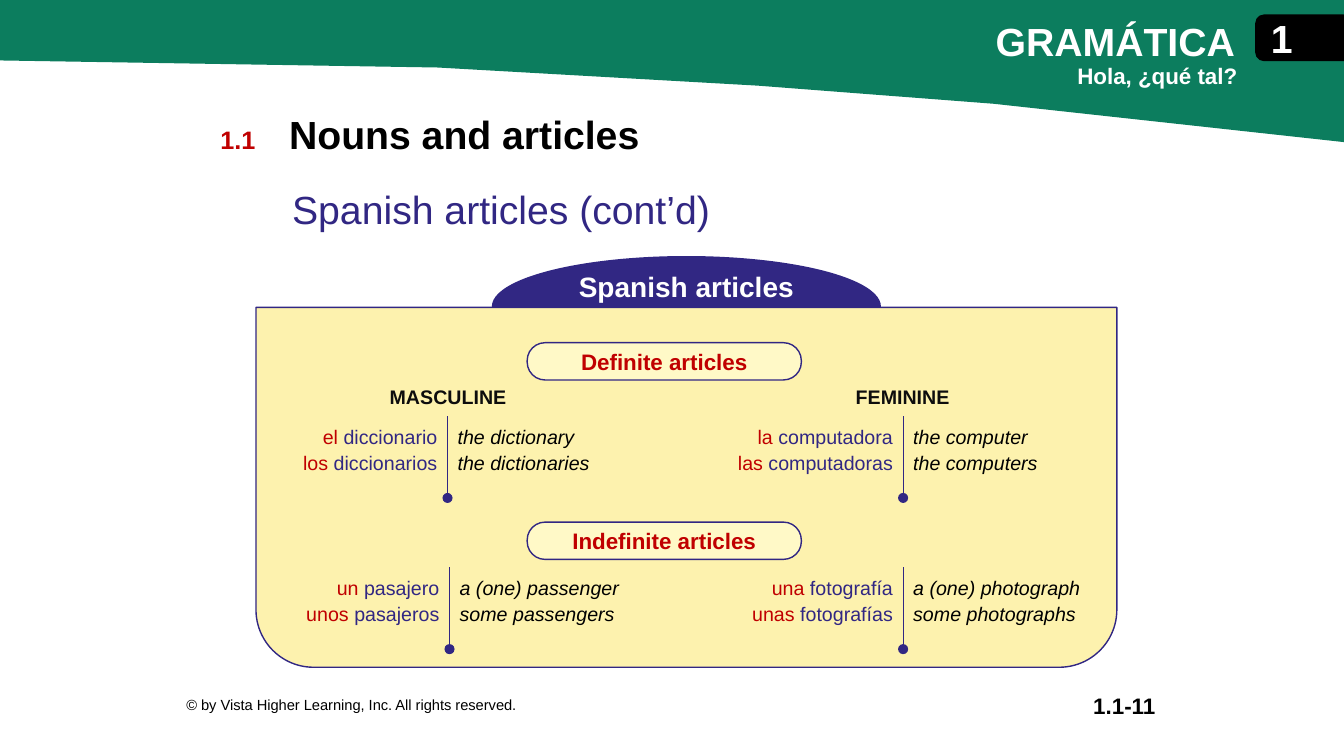
from itertools import accumulate
from lxml.etree import SubElement
from pptx import Presentation
from pptx.dml.color import RGBColor as RGB
from pptx.enum.shapes import MSO_SHAPE as Form
from pptx.enum.text import MSO_ANCHOR as Anchor, PP_ALIGN as Align
from pptx.oxml.ns import qn
from pptx.util import Emu, Inches, Pt

GREEN = RGB(0x0C, 0x7D, 0x5E)
RED = RGB(0xC0, 0x00, 0x00)
BLUE = RGB(0x31, 0x27, 0x83)
CREAM = RGB(0xFD, 0xF2, 0xAE)
PALE = RGB(0xFF, 0xF9, 0xC7)
INK = RGB(0x0D, 0x0D, 0x0D)
BLACK = RGB(0, 0, 0)
WHITE = RGB(0xFF, 0xFF, 0xFF)

COLS, ROWS = 160, 90
CELL = Inches(7.5) / ROWS


def cells(*units):
    return [Emu(round(unit * CELL)) for unit in units]


def write(frame, lines, size=14, color=BLACK, bold=False, italic=False,
          align=Align.LEFT, after=0):
    for num, line in enumerate(lines):
        para = frame.add_paragraph() if num else frame.paragraphs[0]
        para.alignment = align
        para.space_after = Pt(after)
        for part in [(line, color)] if isinstance(line, str) else line:
            run = para.add_run()
            run.text, tint = part
            font = run.font
            font.name, font.size = "Arial", Pt(size)
            font.bold, font.italic = bold, italic
            font.color.rgb = tint


class Board:
    """Holds the current slide and draws styled elements on its grid."""

    def __init__(self, deck):
        self.slide = deck.slides.add_slide(deck.slide_layouts[6])
        self.shapes = self.slide.shapes

    def paint(self, shape, fill, line=None):
        shape.shadow.inherit = False
        shape.fill.solid()
        shape.fill.fore_color.rgb = fill
        if line is None:
            shape.line.fill.background()
        else:
            shape.line.color.rgb = line
            shape.line.width = Pt(1)
        return shape

    def wave(self, points, fill):
        spots = [cells(*point) for point in points]
        pen = self.shapes.build_freeform(*spots[0])
        pen.add_line_segments(spots[1:], close=True)
        self.paint(pen.convert_to_shape(), fill)

    def form(self, kind, box, fill, line=None, bends=(), turn=0):
        shape = self.paint(self.shapes.add_shape(kind, *cells(*box)), fill, line)
        for num, bend in enumerate(bends):
            shape.adjustments[num] = bend
        shape.rotation = turn
        return shape

    def label(self, box, text, anchor=Anchor.MIDDLE, **style):
        frame = self.shapes.add_textbox(*cells(*box)).text_frame
        frame.word_wrap = True
        frame.vertical_anchor = anchor
        write(frame, [text], **style)
        return frame

    def badge(self, kind, box, text, fill, line=None, bends=(), **style):
        frame = self.form(kind, box, fill, line, bends).text_frame
        frame.vertical_anchor = Anchor.MIDDLE
        write(frame, [text], bold=True, align=Align.CENTER, **style)
        return frame

    def edge(self, cell, side):
        props = cell._tc.get_or_add_tcPr()
        for num, name in enumerate(("lnL", "lnR", "lnT", "lnB")):
            line = SubElement(props, qn(f"a:{name}"), w=str(Pt(1)))
            props.insert(num, line)
            if name == side:
                fill = SubElement(line, qn("a:solidFill"))
                SubElement(fill, qn("a:srgbClr"), val=str(BLUE))
            else:
                SubElement(line, qn("a:noFill"))

    def pairs(self, left, top, widths, texts):
        high = 9.48
        grid = self.shapes.add_table(
            1, len(widths), *cells(left, top, sum(widths), high)).table
        grid.first_row = grid.horz_banding = False
        for num, (wide, lines) in enumerate(zip(widths, texts)):
            grid.columns[num].width = cells(wide)[0]
            cell = grid.cell(0, num)
            cell.fill.background()
            cell.margin_top = Inches(0.1)
            cell.margin_bottom = 0
            noun = num % 2 == 0
            self.edge(cell, "lnR" if noun else "lnL")
            if noun:
                lines = [[(word, RED), (f" {rest}", BLUE)]
                         for word, rest in map(str.split, lines)]
            write(cell.text_frame, lines, italic=not noun, after=3,
                  align=Align.RIGHT if noun else Align.LEFT)
        dot = 1.2
        for mid in list(accumulate(widths, initial=left))[1::2]:
            box = mid - dot / 2, top + high + 0.24 - dot / 2, dot, dot
            self.form(Form.OVAL, box, BLUE)


def main():
    deck = Presentation()
    deck.slide_width, deck.slide_height = cells(COLS, ROWS)
    board = Board(deck)

    board.wave([(COLS, 16.92), (118.3, 12.36), (90.2, 10.2), (52.1, 8.04),
                (0, 7.2), (0, 0), (COLS, 0)], GREEN)
    board.label((23.4, 14.16, 9.84, 4.8), "1.1", size=18, color=RED,
                bold=True, align=Align.CENTER)
    board.label((33.24, 12.6, 99.36, 6.84), "Nouns and articles",
                Anchor.TOP, size=28, bold=True)
    board.label((117.36, 1.44, 42.6, 6.84), "GRAMÁTICA", Anchor.TOP,
                size=28, color=WHITE, bold=True)
    board.label((127.08, 6.84, 24, 4.44), "Hola, ¿qué tal?", Anchor.TOP,
                size=16, color=WHITE, bold=True)
    board.form(Form.ROUND_2_SAME_RECTANGLE, (152.04, -0.72, 5.4, 10.44),
               BLACK, BLACK, (0.18, 0), turn=270)
    mark = board.label((150.5, 2.16, 4.2, 4.8), "1", size=28, color=WHITE,
                       bold=True, align=Align.CENTER)
    mark.margin_left = mark.margin_right = 0

    dome = board.badge(Form.OVAL, (58.56, 30.48, 46.32, 12),
                       "Spanish articles", BLUE, size=20, color=WHITE)
    dome.margin_top, dome.margin_bottom = 0, Inches(0.4)
    board.label((102.6, 81.84, 36.12, 4.2), "1.1-11", size=16, bold=True,
                align=Align.RIGHT)
    board.label((21, 81.84, 77.4, 4.2),
                "© by Vista Higher Learning, Inc. All rights reserved.",
                size=10.5)
    board.form(Form.ROUND_2_SAME_RECTANGLE, (30.48, 36.6, 102.48, 42.84),
               CREAM, BLUE, (0, 0.16))

    for left, text in (41.28, "MASCULINE"), (95.4, "FEMININE"):
        board.label((left, 45, 24.12, 4.44), text, color=INK, bold=True,
                    align=Align.CENTER)
    for top, text in (40.8, "Definite articles"), (62.16, "Indefinite articles"):
        board.badge(Form.ROUNDED_RECTANGLE, (62.76, top, 32.64, 4.44), text,
                    PALE, BLUE, (0.48,), size=16, color=RED)

    board.pairs(30, 49.56, (23.28, 25.2, 29.04, 21), (
        ("el diccionario", "los diccionarios"),
        ("the dictionary", "the dictionaries"),
        ("la computadora", "las computadoras"),
        ("the computer", "the computers")))
    board.pairs(30.48, 67.56, (23.04, 25.44, 28.56, 27.84), (
        ("un pasajero", "unos pasajeros"),
        ("a (one) passenger", "some passengers"),
        ("una fotografía", "unas fotografías"),
        ("a (one) photograph", "some photographs")))

    board.label((33.6, 21.48, 53.28, 6.84), "Spanish articles (cont’d)",
                Anchor.TOP, size=28, color=BLUE)
    deck.save("out.pptx")


if __name__ == "__main__":
    main()
